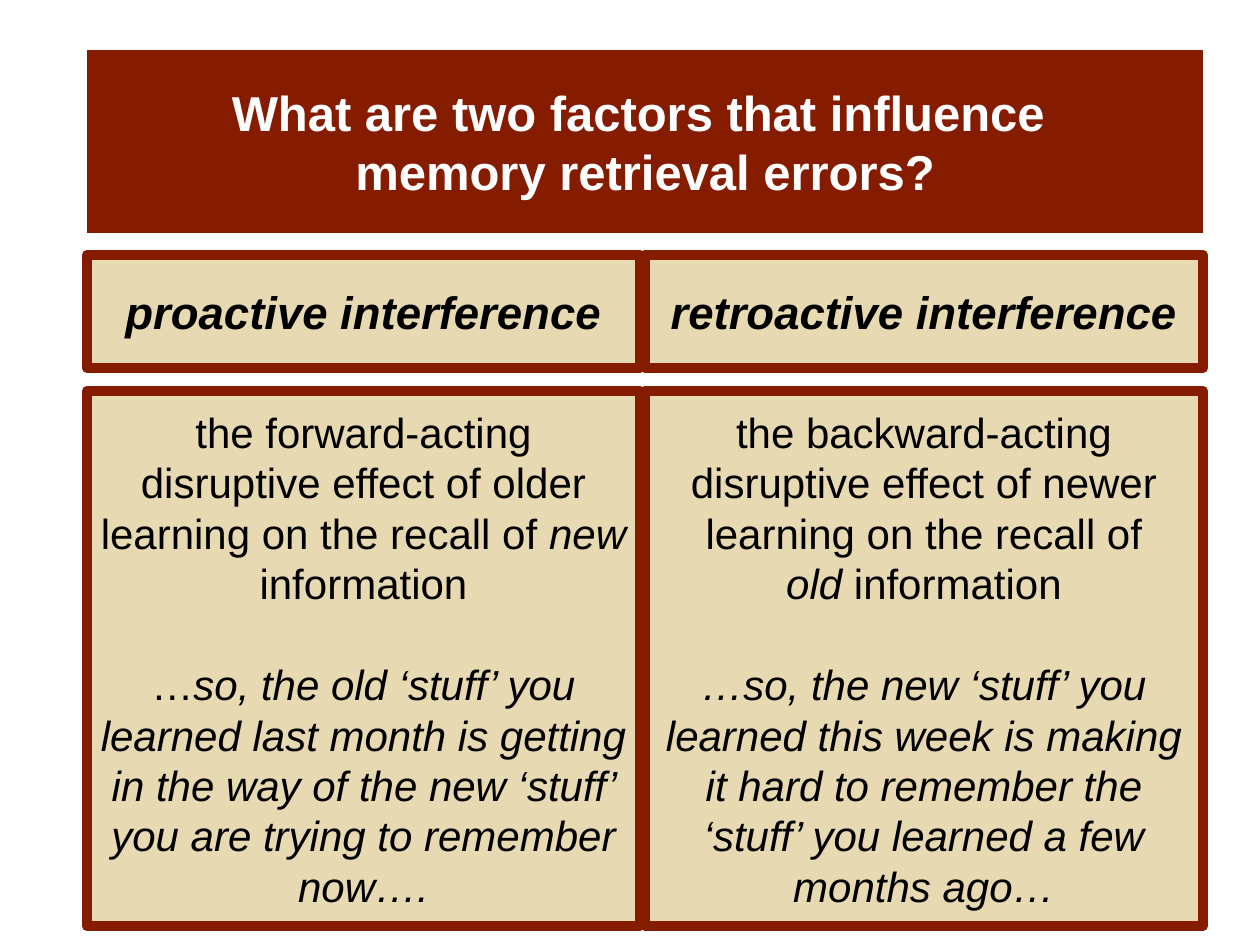
from pptx import Presentation
from pptx.dml.color import RGBColor
from pptx.enum.shapes import MSO_SHAPE
from pptx.enum.text import MSO_ANCHOR, MSO_AUTO_SIZE, PP_ALIGN
from pptx.util import Pt

PX = 914400 // 126
RECT = MSO_SHAPE.RECTANGLE
MIDDLE = MSO_ANCHOR.MIDDLE
CENTER = PP_ALIGN.CENTER
FIXED = MSO_AUTO_SIZE.NONE
RED = RGBColor(0x85, 0x1C, 0x00)
SAND = RGBColor(0xE7, 0xD9, 0xB1)
WHITE = RGBColor(0xFF, 0xFF, 0xFF)
BLACK = RGBColor(0x00, 0x00, 0x00)


def style(frame, size, color, bold):
    frame.word_wrap = True
    frame.auto_size = FIXED
    frame.vertical_anchor = MIDDLE
    frame.margin_left = frame.margin_right = 13 * PX
    for para in frame.paragraphs:
        para.alignment = CENTER
        para.line_spacing = 1.0
        for run in para.runs:
            run.font.name = "Arial"
            run.font.size = Pt(size)
            run.font.bold = bold
            run.font.color.rgb = color


def add_box(left, top, width, height):
    box = slide.shapes.add_shape(RECT, left * PX, top * PX, width * PX, height * PX)
    box.shadow.inherit = False
    box.fill.solid()
    box.fill.fore_color.rgb = SAND
    box.line.color.rgb = RED
    box.line.width = Pt(6)
    return box.text_frame


prs = Presentation()
prs.slide_width = 1260 * PX
prs.slide_height = 945 * PX
slide = prs.slides.add_slide(prs.slide_layouts[5])

title = slide.shapes.title
title.left, title.top = 87 * PX, 50 * PX
title.width, title.height = 1116 * PX, 183 * PX
title.fill.solid()
title.fill.fore_color.rgb = RED
title.text_frame.text = "What are two factors that influence \vmemory retrieval errors?"
style(title.text_frame, 28, WHITE, True)

columns = [
    (87, 553, "proactive interference", [
        [("the forward-acting disruptive effect of older learning on the recall of ", False),
         ("new ", True), ("information", False)],
        [("…", False),
         ("so, the old ‘stuff’ you learned last month is getting in the way of "
          "the new ‘stuff’ you are trying to remember now….", True)],
    ]),
    (645, 558, "retroactive interference", [
        [("the backward-acting disruptive effect of newer learning on the recall of", False)],
        [("old ", True), ("information", False)],
        [("…so, the new ‘stuff’ you learned this week is making it hard to "
          "remember the ‘stuff’ you learned a few months ago…", True)],
    ]),
]

for left, width, term, paras in columns:
    head = add_box(left, 255, width, 113)
    head.text = term
    head.paragraphs[0].runs[0].font.italic = True
    style(head, 26, BLACK, True)

    body = add_box(left, 391, width, 535)
    for i, parts in enumerate(paras):
        para = body.add_paragraph() if i else body.paragraphs[0]
        for words, slant in parts:
            run = para.add_run()
            run.text = words
            run.font.italic = slant
    para.space_before = Pt(29)
    style(body, 24, BLACK, False)

prs.save("out.pptx")
